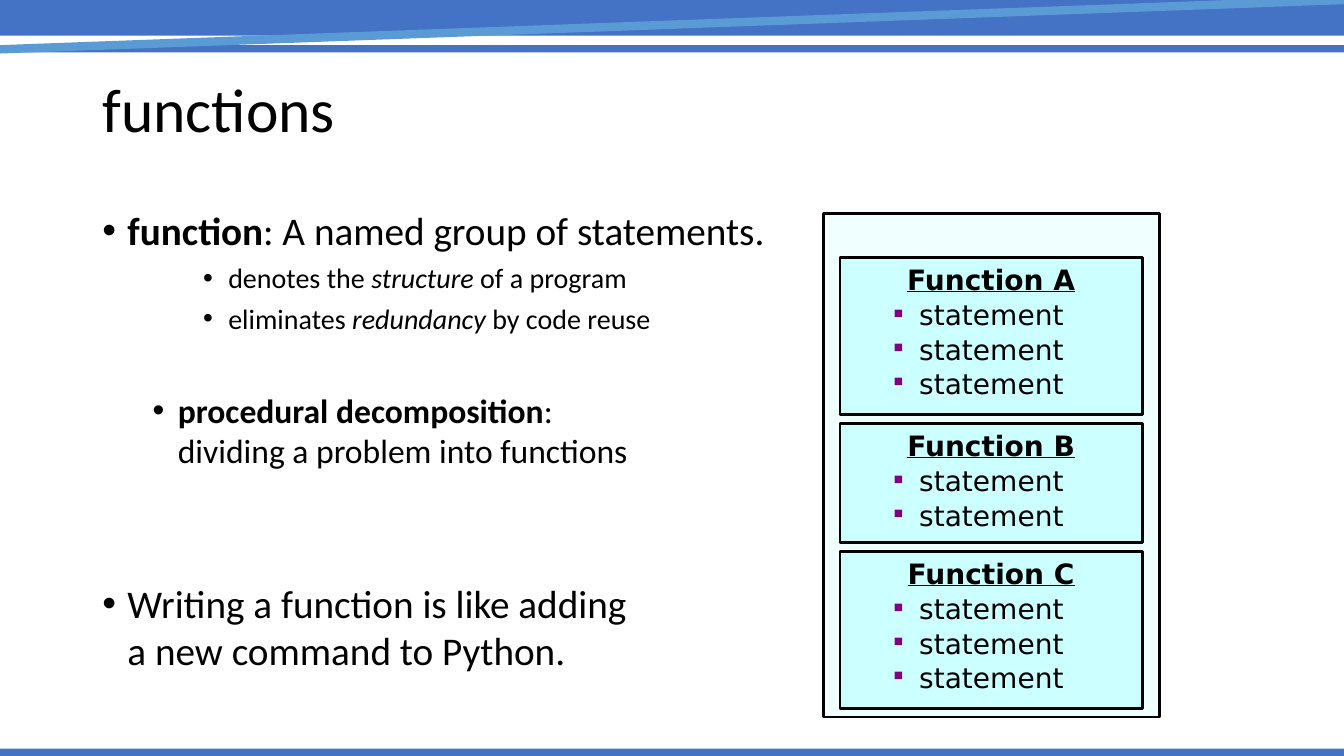
from lxml import etree
from pptx import Presentation
from pptx.dml.color import RGBColor
from pptx.enum.shapes import MSO_CONNECTOR, MSO_SHAPE
from pptx.enum.text import MSO_ANCHOR, PP_ALIGN
from pptx.oxml.ns import qn
from pptx.util import Pt

PX = 9525  # EMU in one px, 96 px to the inch
WIDTH, HEIGHT = 1280, 720
RECTANGLE = MSO_SHAPE.RECTANGLE
STRAIGHT = MSO_CONNECTOR.STRAIGHT
TOP, MIDDLE = MSO_ANCHOR.TOP, MSO_ANCHOR.MIDDLE
LEFT, CENTER = PP_ALIGN.LEFT, PP_ALIGN.CENTER
BODY_FONT, BOX_FONT = "Calibri", "DejaVu Sans"
COLORS = {
    "band": "4472C4",
    "stripe": "5B9BD5",
    "text": "000000",
    "program": "F0FFFF",
    "function": "CCFFFF",
    "marker": "800080",
}

presentation = Presentation()
presentation.slide_width = WIDTH * PX
presentation.slide_height = HEIGHT * PX
slide = presentation.slides.add_slide(presentation.slide_layouts[6])


def add_rectangle(left, top, width, height, fill, outlined=False):
    shape = slide.shapes.add_shape(
        RECTANGLE, left * PX, top * PX, width * PX, height * PX)
    shape.shadow.inherit = False
    shape.fill.solid()
    shape.fill.fore_color.rgb = RGBColor.from_string(COLORS[fill])
    if outlined:
        shape.line.color.rgb = RGBColor.from_string(COLORS["text"])
        shape.line.width = Pt(2)
    else:
        shape.line.fill.background()
    return shape


def write_paragraph(paragraph, runs, font, size, indent=0, hanging=0,
                    before=0, bullet=None):
    """Runs are (text, style) pairs; style letters are b, i, u; "\\n" breaks the line."""
    paragraph.space_before = Pt(before)
    properties = paragraph._p.get_or_add_pPr()
    properties.set("marL", str(indent * PX))
    properties.set("indent", str(-hanging * PX))
    if bullet == "■":
        color = etree.SubElement(properties, qn("a:buClr"))
        etree.SubElement(color, qn("a:srgbClr"), val=COLORS["marker"])
        etree.SubElement(properties, qn("a:buSzPct"), val="55000")
    if bullet:
        etree.SubElement(properties, qn("a:buFont"), typeface="Arial")
        etree.SubElement(properties, qn("a:buChar"), char=bullet)
    for text, style in runs:
        if text == "\n":
            paragraph.add_line_break()
            continue
        run = paragraph.add_run()
        run.text = text
        run.font.name = font
        run.font.size = Pt(size)
        run.font.color.rgb = RGBColor.from_string(COLORS["text"])
        run.font.bold = "b" in style
        run.font.italic = "i" in style
        run.font.underline = "u" in style


# Bands at the top and bottom, with the slanted stripe
for top, height in [(-3, 37), (43, 7), (713, 7)]:
    add_rectangle(0, top, WIDTH, height, "band")
stripe = slide.shapes.add_connector(STRAIGHT, 0, 47 * PX, WIDTH * PX, 0)
stripe.line.color.rgb = RGBColor.from_string(COLORS["stripe"])
stripe.line.width = Pt(6)
etree.SubElement(stripe._element.spPr, qn("a:effectLst"))

# Title
title = slide.shapes.add_textbox(88 * PX, 38 * PX, 1104 * PX, 139 * PX).text_frame
title.word_wrap = True
title.vertical_anchor = MIDDLE
title.paragraphs[0].line_spacing = 0.9
write_paragraph(title.paragraphs[0], [("functions", "")], BODY_FONT, 44)

# Bulleted text: size, indent, space before, runs
points = [
    (28, 24, 10, [("function", "b"), (": A named group of statements.", "")]),
    (20, 120, 5, [("denotes the ", ""), ("structure", "i"), (" of a program", "")]),
    (20, 120, 5, [("eliminates ", ""), ("redundancy", "i"), (" by code reuse", "")]),
    (24, 72, 39, [("procedural decomposition", "b"), (":", ""), ("\n", ""),
                  ("dividing a problem into functions", "")]),
    (28, 24, 78, [("Writing a function is like adding", ""), ("\n", ""),
                  ("a new command to Python.", "")]),
]
body = slide.shapes.add_textbox(88 * PX, 192 * PX, 1104 * PX, 457 * PX).text_frame
body.word_wrap = True
for index, (size, indent, before, runs) in enumerate(points):
    paragraph = body.add_paragraph() if index else body.paragraphs[0]
    write_paragraph(paragraph, runs, BODY_FONT, size, indent, 24, before, "•")

# Program box holding one box for each function
add_rectangle(784, 203, 320, 480, "program", outlined=True)
box_top = 245
for name, statement_count in [("A", 3), ("B", 2), ("C", 3)]:
    box_height = 42 + 36 * statement_count
    box = add_rectangle(800, box_top, 288, box_height, "function", outlined=True)
    frame = box.text_frame
    frame.word_wrap = True
    frame.vertical_anchor = TOP
    heading = frame.paragraphs[0]
    heading.alignment = CENTER
    write_paragraph(heading, [(f"Function {name}", "bu")], BOX_FONT, 20, 30, 30, 10)
    for _ in range(statement_count):
        statement = frame.add_paragraph()
        statement.alignment = LEFT
        statement.line_spacing = 0.6
        write_paragraph(statement, [("statement", "")], BOX_FONT, 20, 66, 24, 10, "■")
    box_top += box_height + 8

presentation.save("out.pptx")
